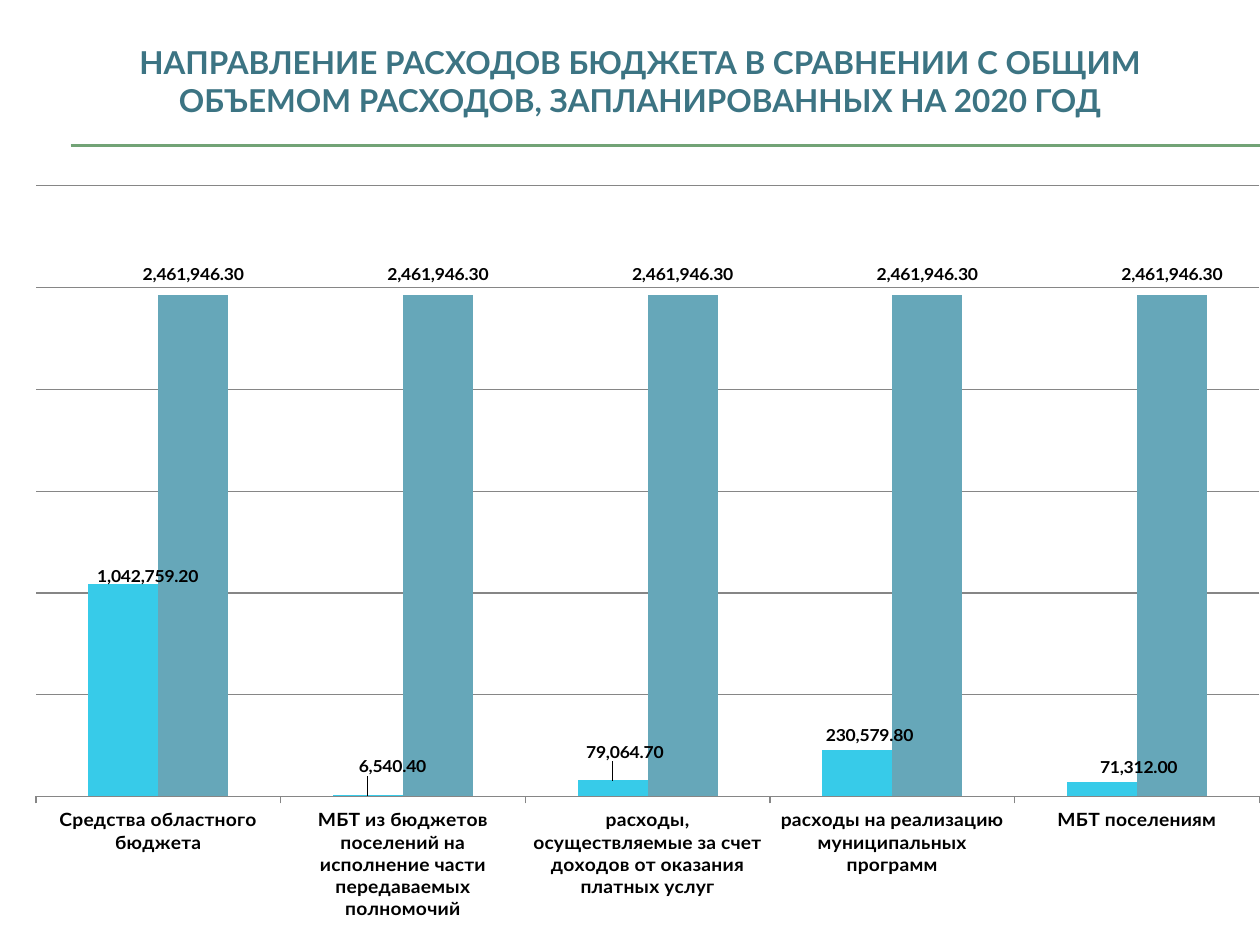
from dataclasses import dataclass

from lxml.etree import SubElement
from pptx import Presentation
from pptx.chart.data import CategoryChartData as Data
from pptx.dml.color import RGBColor as Rgb
from pptx.enum.chart import XL_CHART_TYPE as Kind, XL_LABEL_POSITION as Pos
from pptx.enum.chart import XL_TICK_LABEL_POSITION as Tick, XL_TICK_MARK as Mark
from pptx.enum.shapes import MSO_CONNECTOR as Conn
from pptx.enum.text import MSO_ANCHOR as Anchor, PP_ALIGN as Align
from pptx.oxml import parse_xml
from pptx.oxml.ns import nsdecls, qn
from pptx.util import Inches, Pt

FONT = "Lato"
NUM = "#,##0.00"
HEX = {"title": "3C7483", "rule": "72A376", "grid": "868686",
       "text": "000000", "part": "37CBE9", "total": "66A7B9"}
CATS = [
    "Средства областного бюджета",
    "МБТ из бюджетов поселений на исполнение части передаваемых полномочий",
    "расходы, осуществляемые за счет доходов от оказания платных услуг",
    "расходы на реализацию муниципальных программ",
    "МБТ поселениям",
]


@dataclass
class Group:
    """One series; shifts move its labels by shares of the chart's size."""
    name: str
    color: str
    vals: list[float]
    shifts: list[tuple[float, float]]


GROUPS = [
    Group("Series 1", "part", [1042759.2, 6540.4, 79064.7, 230579.8, 71312],
          [(0.02, 0.01), (0.02, -0.02), (0.01, -0.02), (0.01, 0), (0.03, 0)]),
    Group("Series 2", "total", [2461946.3] * len(CATS),
          [(0, -0.01)] * len(CATS)),
]


def rgb(key: str) -> Rgb:
    return Rgb.from_string(HEX[key])


def style(font, size: float, color: str = "text", bold: bool = True) -> None:
    font.name, font.size, font.bold = FONT, Pt(size), bold
    font.color.rgb = rgb(color)


def rule(slide, top: float) -> None:
    line = slide.shapes.add_connector(
        Conn.STRAIGHT, Inches(0.56), Inches(top), Inches(10), Inches(top))
    line.line.color.rgb = rgb("rule")
    line.line.width = Pt(0.75)
    SubElement(line._element.spPr, qn("a:effectLst"))


def layout(**parts):
    """Manual chart layout, one element for each part."""
    body = "".join(f'<c:{k} val="{v}"/>' for k, v in parts.items())
    return parse_xml(f'<c:layout {nsdecls("c")}><c:manualLayout>{body}'
                     '</c:manualLayout></c:layout>')


def paint(series, group: Group) -> None:
    series.format.fill.solid()
    series.format.fill.fore_color.rgb = rgb(group.color)
    series.invert_if_negative = False
    labels = series.data_labels
    labels.show_value = True
    labels.number_format, labels.number_format_is_linked = NUM, False
    labels.position = Pos.OUTSIDE_END
    style(labels.font, 10)
    for i, (x, y) in enumerate(group.shifts):
        label = series.points[i].data_label
        style(label.font, 10)
        label.position = Pos.OUTSIDE_END
    for node, (x, y) in zip(labels._element.findall(qn("c:dLbl")), group.shifts):
        form = parse_xml(f'<c:numFmt {nsdecls("c")} formatCode="{NUM}" '
                         'sourceLinked="0"/>')
        node.insert(1, layout(x=x, y=y))
        node.insert(2, form)


def draw_chart(slide) -> None:
    data = Data(number_format=NUM)
    data.categories = CATS
    for group in GROUPS:
        data.add_series(group.name, group.vals)
    chart = slide.shapes.add_chart(
        Kind.COLUMN_CLUSTERED, Inches(0.28), Inches(1.47),
        Inches(9.72), Inches(5.83), data).chart
    chart.has_legend = chart.has_title = False
    style(chart.font, 18, bold=False)

    plot = chart.plots[0]
    plot.gap_width, plot.overlap = 150, 0
    plot.vary_by_categories = False
    for series, group in zip(plot.series, GROUPS):
        paint(series, group)

    cat, val = chart.category_axis, chart.value_axis
    style(cat.tick_labels.font, 11)
    cat.major_tick_mark = Mark.OUTSIDE
    cat.tick_label_position = Tick.LOW
    val.visible = False
    val.minimum_scale, val.maximum_scale = 0, 3_000_000
    val.major_unit = 500_000
    val.has_major_gridlines = True
    for line in (cat.format.line, val.major_gridlines.format.line):
        line.color.rgb = rgb("grid")
        line.width = Pt(0.75)

    area = chart._chartSpace.chart.plotArea
    for old in area.findall(qn("c:layout")):
        area.remove(old)
    area.insert(0, layout(layoutTarget="inner", xMode="edge", yMode="edge",
                          x=0, y=0, w=1, h=0.88))


def main() -> None:
    deck = Presentation()
    deck.slide_width, deck.slide_height = Inches(10), Inches(7.5)
    slide = deck.slides.add_slide(deck.slide_layouts[5])
    for top in (1.15, 1.16):
        rule(slide, top)

    title = slide.shapes.title
    title.left, title.top = Inches(0.33), Inches(0.21)
    title.width, title.height = Inches(9.5), Inches(0.87)
    frame = title.text_frame
    frame.text = ("НАПРАВЛЕНИЕ РАСХОДОВ БЮДЖЕТА В СРАВНЕНИИ С ОБЩИМ "
                  "ОБЪЕМОМ РАСХОДОВ, ЗАПЛАНИРОВАННЫХ НА 2020 ГОД")
    frame.word_wrap, frame.vertical_anchor = True, Anchor.MIDDLE
    frame.paragraphs[0].alignment = Align.CENTER
    style(frame.paragraphs[0].runs[0].font, 18, "title")

    draw_chart(slide)
    deck.save("out.pptx")


if __name__ == "__main__":
    main()
